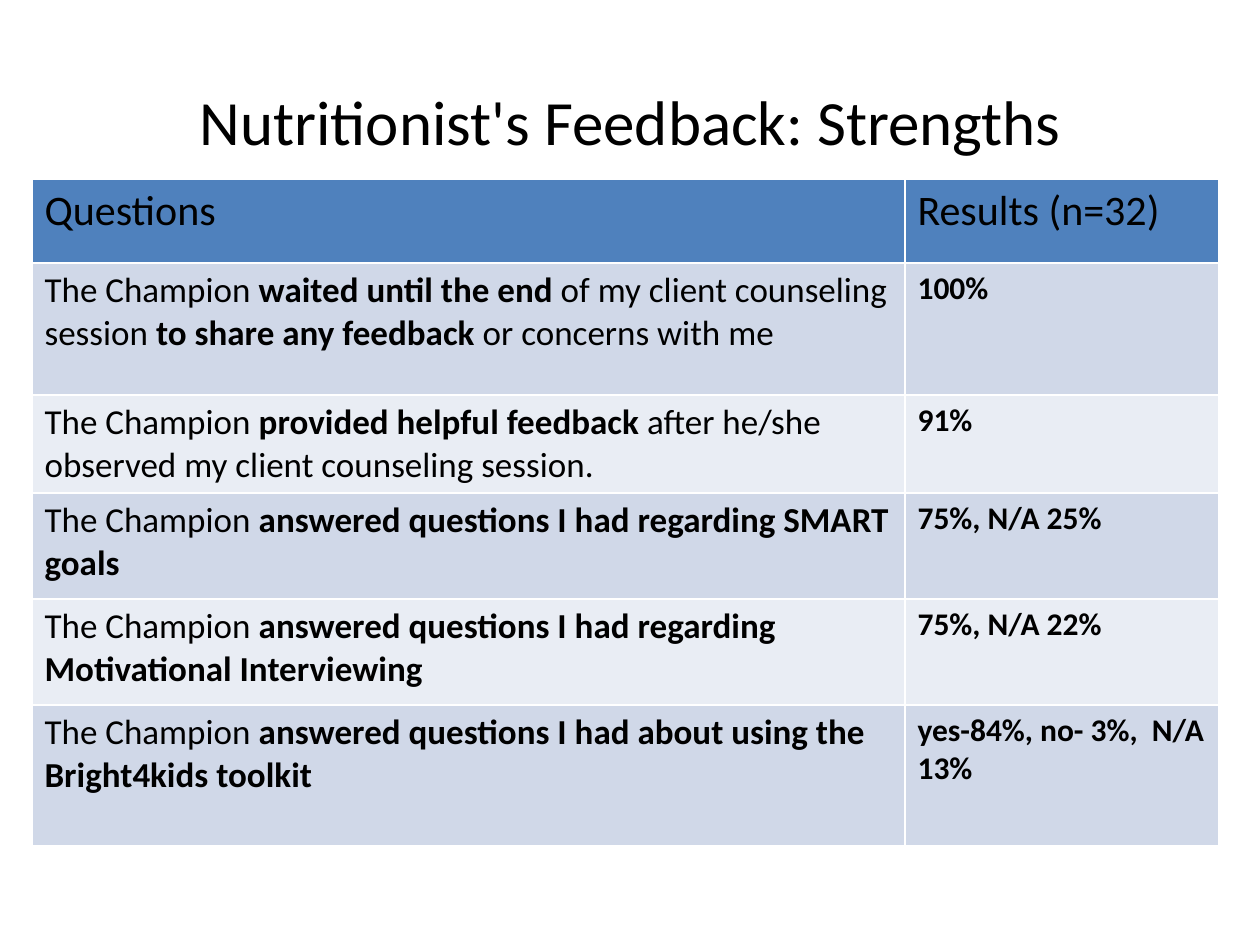
"""Build the slide of nutritionist feedback strengths with its results table."""
from dataclasses import dataclass

from pptx import Presentation
from pptx.dml.color import RGBColor
from pptx.enum.text import MSO_ANCHOR, PP_ALIGN
from pptx.util import Emu, Pt

MIDDLE = MSO_ANCHOR.MIDDLE
CENTER = PP_ALIGN.CENTER
BLACK = RGBColor(0x00, 0x00, 0x00)
HEADER = RGBColor(0x4F, 0x81, 0xBD)
BANDS = (RGBColor(0xD0, 0xD8, 0xE8), RGBColor(0xE9, 0xED, 0xF4))
PX_PER_INCH = 126
COLUMN_WIDTHS = (873, 314)
MARK = "**"


@dataclass
class Row:
    """One table row; bold stretches of text stand between marks."""
    question: str
    result: str
    height: int
    sizes: tuple[int, int] = (20, 18)


ROWS = (
    Row("Questions", "Results (n=32)", 84, (24, 24)),
    Row("The Champion **waited until the end** of my client counseling session "
        "**to share any feedback **or concerns with me", "**100%**", 132),
    Row("The Champion **provided helpful feedback **after he/she observed "
        "my client counseling session.", "**91%**", 98),
    Row("The Champion **answered questions I had regarding SMART goals**",
        "**75%, N/A 25%**", 106),
    Row("The Champion **answered questions I had regarding "
        "Motivational Interviewing**", "**75%, N/A 22%**", 106),
    Row("The Champion **answered questions I had about using the "
        "Bright4kids toolkit**", "**yes-84%, no- 3%,  N/A 13%**", 141),
)


def px(n: int) -> Emu:
    """Turn pixels into EMU."""
    return Emu(round(n * 914400 / PX_PER_INCH))


def write(p, text: str, size: int) -> None:
    """Fill a paragraph with runs, bold between marks."""
    for i, part in enumerate(text.split(MARK)):
        if part:
            r = p.add_run()
            r.text = part
            font = {"name": "Calibri", "size": Pt(size), "bold": i % 2 == 1}
            for name, value in font.items():
                setattr(r.font, name, value)
            r.font.color.rgb = BLACK


def add_title(s, text: str) -> None:
    """Add the centred title."""
    sp = s.shapes.add_textbox(px(95), px(42), px(1071), px(157))
    tf = sp.text_frame
    for name, value in {"word_wrap": True, "vertical_anchor": MIDDLE}.items():
        setattr(tf, name, value)
    p = tf.paragraphs[0]
    p.alignment = CENTER
    write(p, text, 36)


def add_results(s, rows: tuple[Row, ...]) -> None:
    """Add the banded table of questions and results."""
    table = s.shapes.add_table(
        len(rows), len(COLUMN_WIDTHS), px(32), px(179),
        px(sum(COLUMN_WIDTHS)), px(sum(row.height for row in rows))).table
    for column, width in zip(table.columns, COLUMN_WIDTHS):
        column.width = px(width)
    for i, row in enumerate(rows):
        table.rows[i].height = px(row.height)
        texts = (row.question, row.result)
        for cell, text, size in zip(table.rows[i].cells, texts, row.sizes):
            cell.fill.solid()
            cell.fill.fore_color.rgb = BANDS[(i - 1) % 2] if i else HEADER
            write(cell.text_frame.paragraphs[0], text, size)


def main() -> None:
    """Build and save the slide."""
    prs = Presentation()
    prs.slide_width, prs.slide_height = px(1260), px(945)
    s = prs.slides.add_slide(prs.slide_layouts[6])
    add_title(s, "Nutritionist's Feedback: Strengths")
    add_results(s, ROWS)
    prs.save("out.pptx")


if __name__ == "__main__":
    main()
